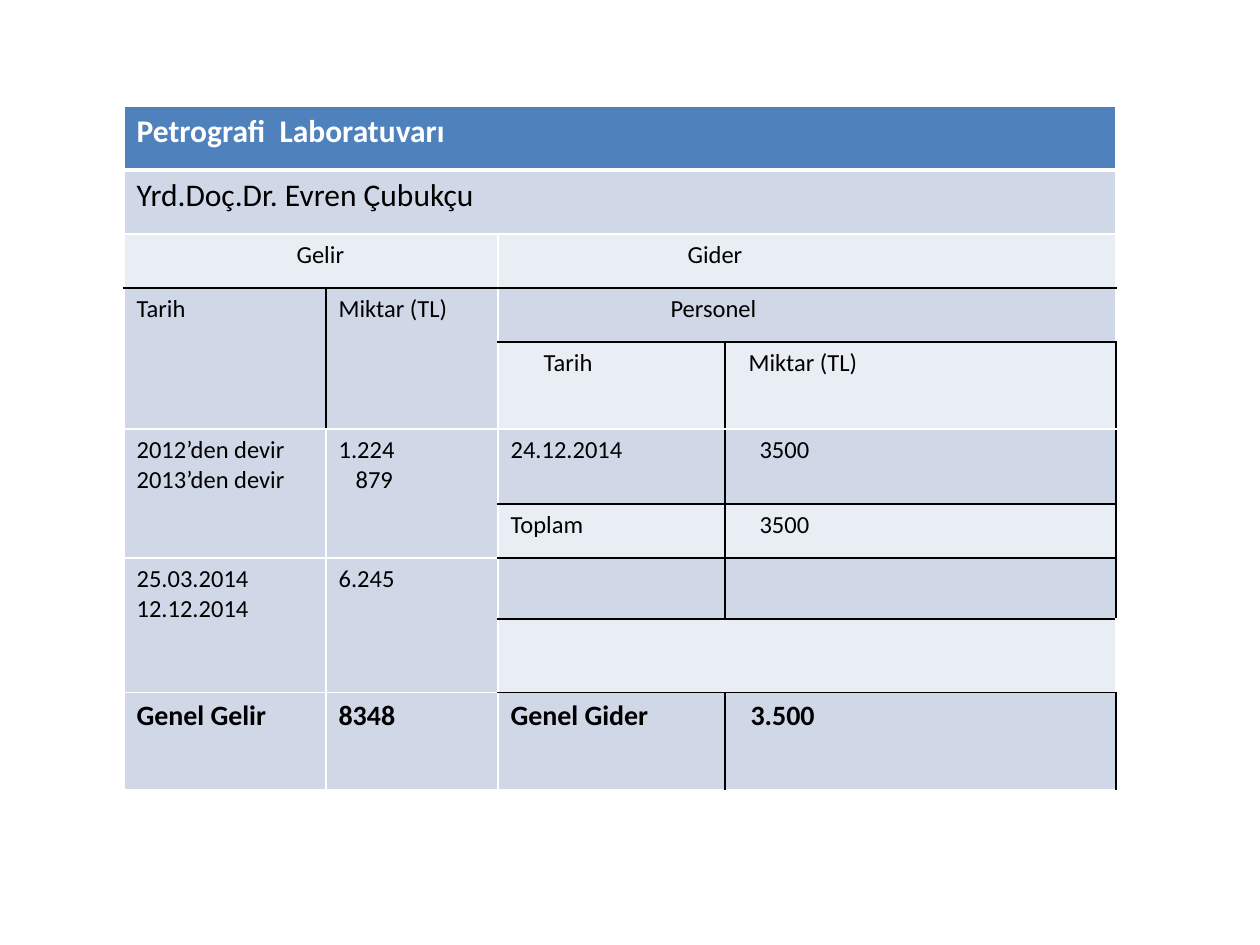
from dataclasses import dataclass

from lxml import etree
from pptx import Presentation
from pptx.dml.color import RGBColor
from pptx.oxml.ns import qn
from pptx.util import Pt

PX = 914400 / 126
SLIDE_SIZE = (1260, 945)
LEDGER_BOX = (124, 106)
COLUMNS = (202, 172, 227, 391)
ROWS = (64, 64, 54, 54, 87, 75, 54, 61, 74, 97)


@dataclass(frozen=True)
class Theme:
    font: str = "Calibri"
    header: str = "4F81BD"
    dark_band: str = "D0D8E8"
    light_band: str = "E9EDF4"
    rule: str = "000000"
    gap: str = "FFFFFF"
    text: str = "000000"
    header_text: str = "FFFFFF"


THEME = Theme()
HEADER = {"size": Pt(18), "bold": True}
NAME = {"size": Pt(18), "bold": False}
BODY = {"size": Pt(14), "bold": False}
TOTAL = {"size": Pt(16), "bold": True}
DARK, LIGHT = THEME.dark_band, THEME.light_band

# row, column, row span, column span, fill, format, black sides, (text, indent in px) lines
LEDGER = [
    (0, 0, 1, 4, THEME.header, HEADER, "", [("Petrografi  Laboratuvarı", 0)]),
    (1, 0, 1, 4, DARK, NAME, "", [("Yrd.Doç.Dr. Evren Çubukçu", 0)]),
    (2, 0, 1, 2, LIGHT, BODY, "B", [("Gelir", 160)]),
    (2, 2, 1, 2, LIGHT, BODY, "B", [("Gider", 177)]),
    (3, 0, 2, 1, DARK, BODY, "TR", [("Tarih", 0)]),
    (3, 1, 2, 1, DARK, BODY, "LT", [("Miktar (TL)", 0)]),
    (3, 2, 1, 2, DARK, BODY, "TB", [("Personel", 160)]),
    (4, 2, 1, 1, LIGHT, BODY, "TR", [("Tarih", 33)]),
    (4, 3, 1, 1, LIGHT, BODY, "LTR", [("Miktar (TL)", 11)]),
    (5, 0, 2, 1, DARK, BODY, "", [("2012’den devir", 0), ("2013’den devir", 0)]),
    (5, 1, 2, 1, DARK, BODY, "", [("1.224", 0), ("879", 17)]),
    (5, 2, 1, 1, DARK, BODY, "RB", [("24.12.2014", 0)]),
    (5, 3, 1, 1, DARK, BODY, "LRB", [("3500", 22)]),
    (6, 2, 1, 1, LIGHT, BODY, "TRB", [("Toplam", 0)]),
    (6, 3, 1, 1, LIGHT, BODY, "LTRB", [("3500", 22)]),
    (7, 0, 2, 1, DARK, BODY, "", [("25.03.2014", 0), ("12.12.2014", 0)]),
    (7, 1, 2, 1, DARK, BODY, "", [("6.245", 0)]),
    (7, 2, 1, 1, DARK, BODY, "TRB", []),
    (7, 3, 1, 1, DARK, BODY, "LTRB", []),
    (8, 2, 1, 2, LIGHT, BODY, "TB", []),
    (9, 0, 1, 1, DARK, TOTAL, "", [("Genel Gelir", 0)]),
    (9, 1, 1, 1, DARK, TOTAL, "", [("8348", 0)]),
    (9, 2, 1, 1, DARK, TOTAL, "TR", [("Genel Gider", 0)]),
    (9, 3, 1, 1, DARK, TOTAL, "LTR", [("3.500", 13)]),
]


def px(length):
    return round(length * PX)


def set_borders(cell, sides, black_sides):
    properties = cell._tc.get_or_add_tcPr()
    for side in sides:
        line = etree.SubElement(properties, qn(f"a:ln{side}"), w=str(Pt(1)))
        solid = etree.SubElement(line, qn("a:solidFill"))
        colour = THEME.rule if side in black_sides else THEME.gap
        etree.SubElement(solid, qn("a:srgbClr"), val=colour)
    if cell._tc.row_idx == 0:
        properties.find(qn("a:lnB")).set("w", str(Pt(3)))


def write_lines(cell, lines, text_format, colour):
    frame = cell.text_frame
    for index, (text, indent) in enumerate(lines):
        paragraph = frame.add_paragraph() if index else frame.paragraphs[0]
        if indent:
            paragraph._p.get_or_add_pPr().set("marL", str(px(indent)))
        run = paragraph.add_run()
        run.text = text
        for name, value in {"name": THEME.font, **text_format}.items():
            setattr(run.font, name, value)
        run.font.color.rgb = RGBColor.from_string(colour)


def fill_block(table, row, column, row_span, column_span, fill, text_format, black_sides, lines):
    """Format one ledger entry, drawing borders only on the outer edge of its span."""
    last_row, last_column = row + row_span - 1, column + column_span - 1
    for r in range(row, last_row + 1):
        for c in range(column, last_column + 1):
            cell = table.cell(r, c)
            on_edge = {"L": c == column, "R": c == last_column,
                       "T": r == row, "B": r == last_row}
            set_borders(cell, [side for side, edge in on_edge.items() if edge], black_sides)
            cell.fill.solid()
            cell.fill.fore_color.rgb = RGBColor.from_string(fill)
    origin = table.cell(row, column)
    if row_span * column_span > 1:
        origin.merge(table.cell(last_row, last_column))
    colour = THEME.header_text if fill == THEME.header else THEME.text
    write_lines(origin, lines, text_format, colour)


def add_ledger(slide, left, top):
    table = slide.shapes.add_table(len(ROWS), len(COLUMNS), px(left), px(top),
                                   px(sum(COLUMNS)), px(sum(ROWS))).table
    table.first_row = table.horz_banding = False
    for column, width in zip(table.columns, COLUMNS):
        column.width = px(width)
    for row, height in zip(table.rows, ROWS):
        row.height = px(height)
    for entry in LEDGER:
        fill_block(table, *entry)


def main():
    presentation = Presentation()
    presentation.slide_width, presentation.slide_height = map(px, SLIDE_SIZE)
    slide = presentation.slides.add_slide(presentation.slide_layouts[6])
    add_ledger(slide, *LEDGER_BOX)
    presentation.save("out.pptx")


if __name__ == "__main__":
    main()
